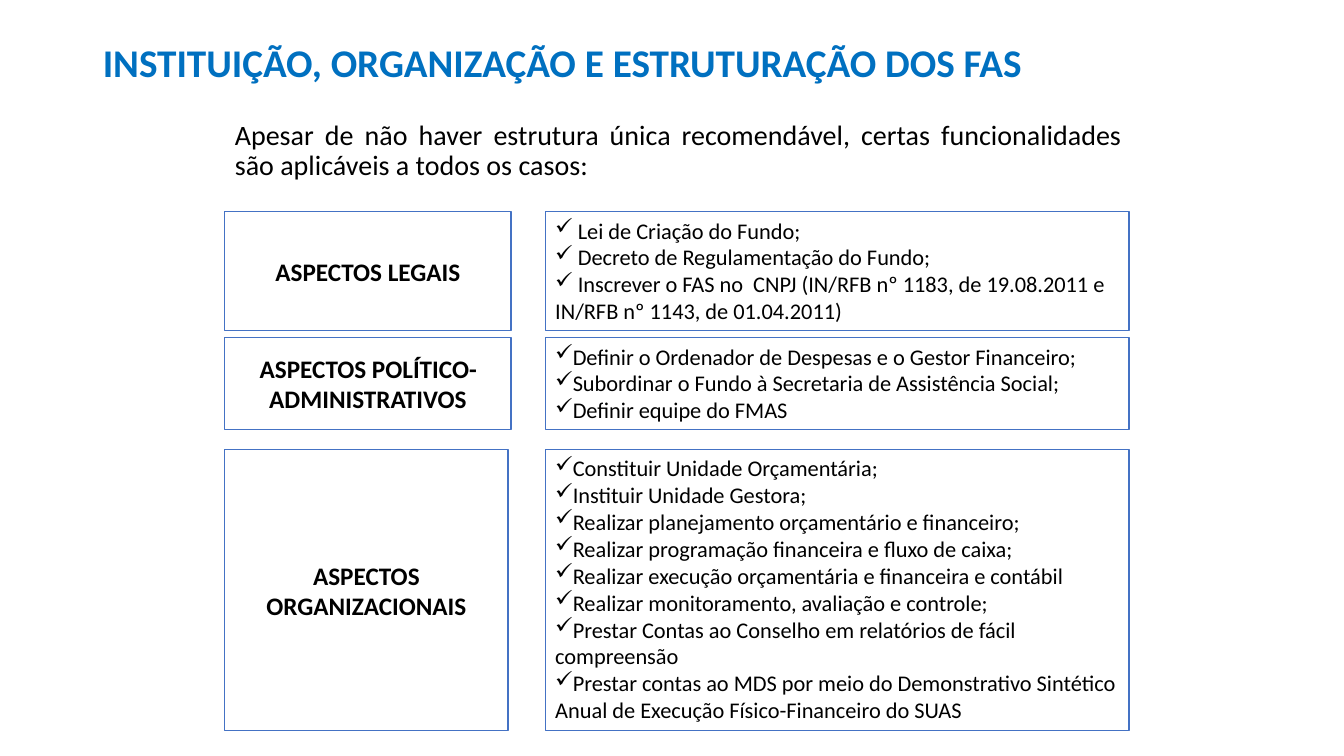
from lxml.etree import SubElement
from pptx import Presentation
from pptx.dml.color import RGBColor
from pptx.enum.shapes import MSO_SHAPE
from pptx.enum.text import MSO_ANCHOR, MSO_AUTO_SIZE, PP_ALIGN
from pptx.oxml.ns import qn
from pptx.util import Pt

COLORS = {"title": "0070C0", "text": "000000", "box": "FFFFFF", "border": "4472C4"}
FONT = "Calibri"
LABEL_LEFT = 160.56
LIST_LEFT, LIST_WIDTH = 389.52, 416.88

ASPECTS = [
    {
        "label": "ASPECTOS LEGAIS",
        "top": 151.2, "height": 84.96, "label_width": 204.48,
        "insets": (7.2, 3.6), "align": PP_ALIGN.LEFT,
        "items": [
            " Lei de Criação do Fundo;",
            " Decreto de Regulamentação do Fundo;",
            " Inscrever o FAS no  CNPJ (IN/RFB nº 1183, de 19.08.2011 e "
            "IN/RFB nº 1143, de 01.04.2011)",
        ],
    },
    {
        "label": "ASPECTOS POLÍTICO-ADMINISTRATIVOS",
        "top": 241.2, "height": 65.52, "label_width": 204.48,
        "insets": (1.44, 0.72), "align": PP_ALIGN.JUSTIFY,
        "items": [
            "Definir o Ordenador de Despesas e o Gestor Financeiro;",
            "Subordinar o Fundo à Secretaria de Assistência Social;",
            "Definir equipe do FMAS",
        ],
    },
    {
        "label": "ASPECTOS ORGANIZACIONAIS",
        "top": 321.12, "height": 200.88, "label_width": 202.32,
        "insets": (7.2, 3.6), "align": PP_ALIGN.LEFT,
        "items": [
            "Constituir Unidade Orçamentária;",
            "Instituir Unidade Gestora;",
            "Realizar planejamento orçamentário e financeiro;",
            "Realizar programação financeira e fluxo de caixa;",
            "Realizar execução orçamentária e financeira e contábil",
            "Realizar monitoramento, avaliação e controle;",
            "Prestar Contas ao Conselho em relatórios de fácil compreensão",
            "Prestar contas ao MDS por meio do Demonstrativo Sintético "
            "Anual de Execução Físico-Financeiro do SUAS",
        ],
    },
]


def color(name):
    return RGBColor.from_string(COLORS[name])


def write(paragraph, text, size, align, ink="text", bold=False):
    paragraph.alignment = align
    run = paragraph.add_run()
    run.text = text
    run.font.name = FONT
    run.font.size = Pt(size)
    run.font.bold = bold
    run.font.color.rgb = color(ink)


def set_bullet(paragraph, mark=None):
    properties = paragraph._p.get_or_add_pPr()
    properties.set("marL", "0")
    properties.set("indent", "0")
    if mark:
        SubElement(properties, qn("a:buChar")).set("char", mark)
    else:
        SubElement(properties, qn("a:buNone"))


def fill_placeholder(holder, area, text, size, align, anchor, ink="text", bold=False):
    holder.left, holder.top, holder.width, holder.height = map(Pt, area)
    frame = holder.text_frame
    frame.auto_size = MSO_AUTO_SIZE.NONE
    frame.vertical_anchor = anchor
    paragraph = frame.paragraphs[0]
    paragraph.line_spacing = 0.9
    paragraph.space_before = Pt(0)
    write(paragraph, text, size, align, ink, bold)
    set_bullet(paragraph)


def add_box(slide, left, top, width, height, anchor):
    box = slide.shapes.add_shape(
        MSO_SHAPE.RECTANGLE, Pt(left), Pt(top), Pt(width), Pt(height))
    box.shadow.inherit = False
    box.fill.solid()
    box.fill.fore_color.rgb = color("box")
    box.line.color.rgb = color("border")
    box.line.width = Pt(1)
    frame = box.text_frame
    frame.word_wrap = True
    frame.vertical_anchor = anchor
    return frame


def add_label(slide, aspect):
    label = add_box(slide, LABEL_LEFT, aspect["top"], aspect["label_width"],
                    aspect["height"], MSO_ANCHOR.MIDDLE)
    side, edge = map(Pt, aspect["insets"])
    label.margin_left = label.margin_right = side
    label.margin_top = label.margin_bottom = edge
    write(label.paragraphs[0], aspect["label"], 18, PP_ALIGN.CENTER, bold=True)


def add_checklist(slide, aspect):
    checklist = add_box(slide, LIST_LEFT, aspect["top"], LIST_WIDTH,
                        aspect["height"], MSO_ANCHOR.TOP)
    checklist.auto_size = MSO_AUTO_SIZE.SHAPE_TO_FIT_TEXT
    for index, item in enumerate(aspect["items"]):
        paragraph = checklist.add_paragraph() if index else checklist.paragraphs[0]
        write(paragraph, item, 16, aspect["align"])
        set_bullet(paragraph, "✓")


def main():
    deck = Presentation()
    deck.slide_width, deck.slide_height = Pt(960), Pt(540)
    slide = deck.slides.add_slide(deck.slide_layouts[1])
    fill_placeholder(
        slide.shapes.title, (66.24, -5.76, 828, 104.4),
        "INSTITUIÇÃO, ORGANIZAÇÃO E ESTRUTURAÇÃO DOS FAS",
        28, PP_ALIGN.LEFT, MSO_ANCHOR.MIDDLE, "title", True)
    fill_placeholder(
        slide.placeholders[1], (160.56, 82.8, 648, 356.4),
        "Apesar de não haver estrutura única recomendável, certas "
        "funcionalidades são aplicáveis a todos os casos:",
        20, PP_ALIGN.JUSTIFY, MSO_ANCHOR.TOP)
    for aspect in ASPECTS:
        add_label(slide, aspect)
        add_checklist(slide, aspect)
    deck.save("out.pptx")


if __name__ == "__main__":
    main()
